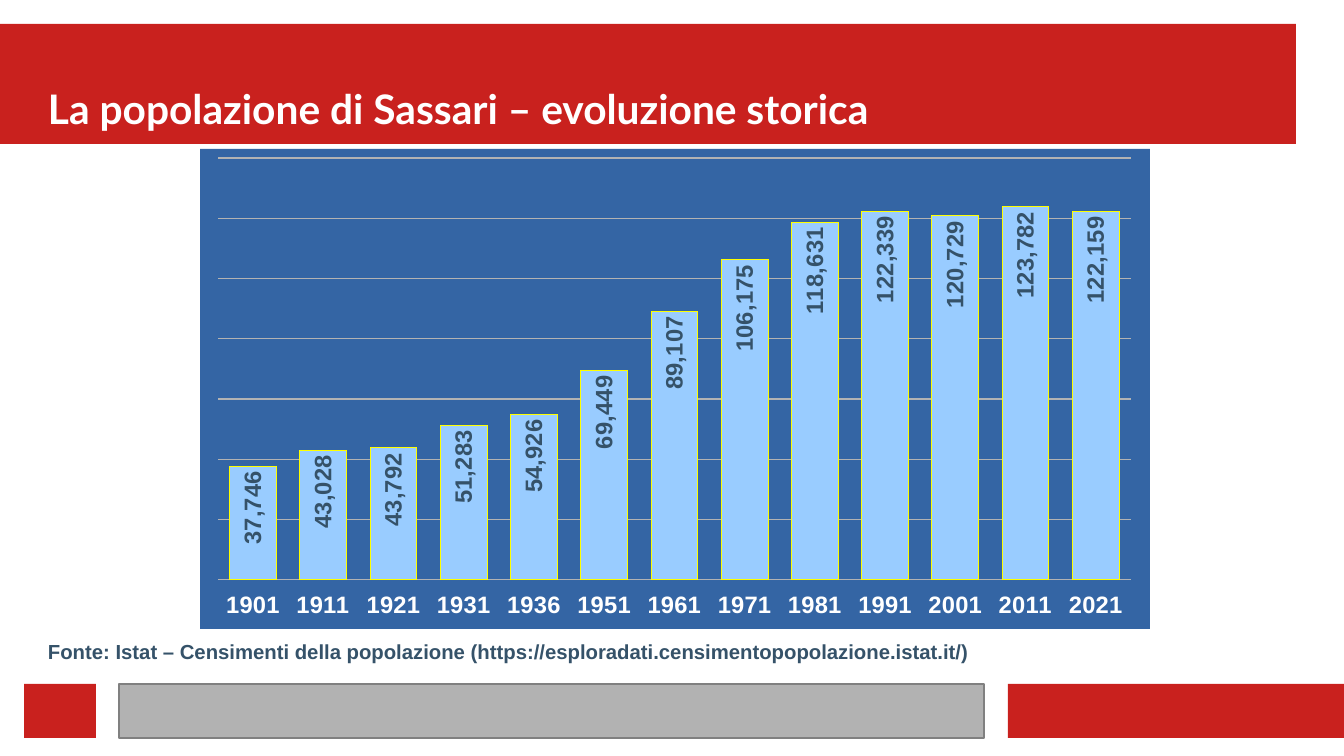
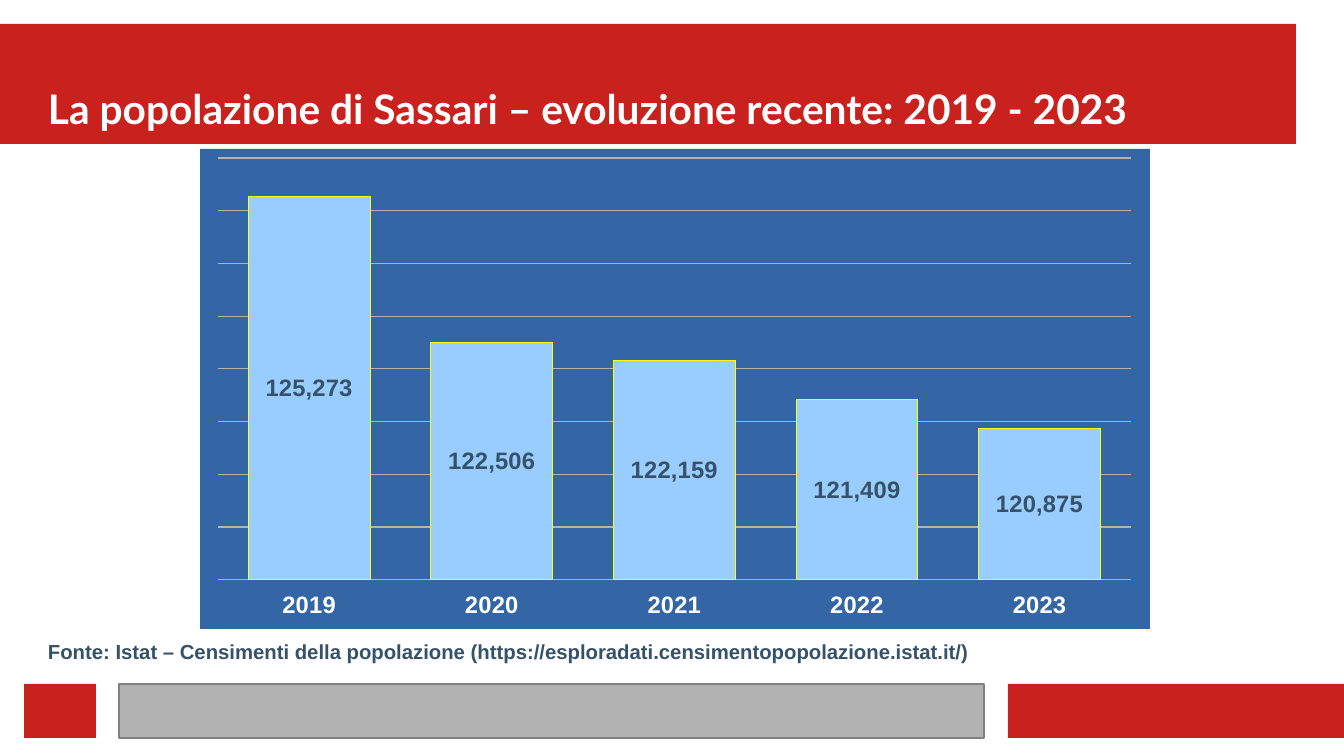
"""Build two slides on the population of Sassari."""
from lxml import etree
from pptx import Presentation
from pptx import util as u
from pptx.chart import data
from pptx.dml import color
from pptx.enum import chart as ch, shapes, text
from pptx.oxml import ns

PX = 914400 / 122
HUES = {"red": "C9211E", "gray": "B2B2B2", "edge": "808080", "ink": "355269",
        "white": "FFFFFF", "back": "3465A4", "bar": "99CCFF",
        "rim": "FFFF00", "grid": "B3B3B3", "black": "000000"}
BANDS = [((0, 24, 1296, 120), "red", None),
         ((1008, 684, 336, 54), "red", None),
         ((119, 684, 865, 54), "gray", "edge"),
         ((24, 684, 72, 54), "red", None)]
HEAD = {"size": u.Pt(24), "name": "Lato", "bold": True}
NOTE = {"size": u.Pt(12), "name": "Arial", "bold": True}
MARK = {"size": u.Pt(14), "name": "Arial", "bold": True}
BASE = {"size": u.Pt(10), "name": "Arial"}
FRAME = {"margin_left": 0, "margin_top": 0, "margin_right": 0,
         "margin_bottom": 0, "word_wrap": True}
PLOT = (200, 149, 950, 480)
INNER = (18, 9, 913, 422)
SOURCE = ("Fonte: Istat – Censimenti della popolazione "
          "(https://esploradati.censimentopopolazione.istat.it/)")
PAST = {"1901": 37746, "1911": 43028, "1921": 43792, "1931": 51283,
        "1936": 54926, "1951": 69449, "1961": 89107, "1971": 106175,
        "1981": 118631, "1991": 122339, "2001": 120729, "2011": 123782,
        "2021": 122159}
LATE = {"2019": 125273, "2020": 122506, "2021": 122159, "2022": 121409,
        "2023": 120875}


def emu(box):
    """Turn px lengths into EMU."""
    return [u.Emu(round(n * PX)) for n in box]


def hue(name):
    """Return a named colour."""
    return color.RGBColor.from_string(HUES[name])


def put(item, vals):
    """Set each attribute in vals on item."""
    for key, val in vals.items():
        setattr(item, key, val)


def style(font, vals, tint):
    """Format a font and give it a colour."""
    put(font, vals)
    font.color.rgb = hue(tint)


def paint(form, fill, edge):
    """Give a format or shape its fill and hairline."""
    form.fill.solid()
    form.fill.fore_color.rgb = hue(fill)
    if edge:
        rule(form.line, edge)
    else:
        form.line.fill.background()


def rule(line, tint):
    """Make a line a coloured hairline."""
    line.color.rgb = hue(tint)
    line.width = 0


def dress(slide):
    """Draw the shared bands and move them to the layout."""
    tree = slide.slide_layout.shapes.element
    for box, fill, edge in BANDS:
        band = slide.shapes.add_shape(shapes.MSO_SHAPE.RECTANGLE, *emu(box))
        band.shadow.inherit = False
        paint(band, fill, edge)
        tree.append(band.element)


def write(slide, box, words, vals, tint, anchor, after=0):
    """Add a text box without margins."""
    frame = slide.shapes.add_textbox(*emu(box)).text_frame
    put(frame, {**FRAME, "vertical_anchor": anchor})
    para = frame.paragraphs[0]
    para.space_after = u.Pt(after)
    run = para.add_run()
    run.text = words
    style(run.font, vals, tint)


def node(root, tag, **attrs):
    """Append an XML child with attributes."""
    return etree.SubElement(root, ns.qn(tag), attrs)


def back(chart):
    """Fill the chart area and fix the inner plot box."""
    core = chart.element.find(ns.qn("c:chart"))
    area = etree.Element(ns.qn("c:spPr"))
    node(node(area, "a:solidFill"), "a:srgbClr", val=HUES["back"])
    node(node(area, "a:ln"), "a:noFill")
    core.addnext(area)
    plot = core.find(ns.qn("c:plotArea"))
    for old in plot.findall(ns.qn("c:layout")):
        plot.remove(old)
    lay = etree.Element(ns.qn("c:layout"))
    plot.insert(0, lay)
    man = node(lay, "c:manualLayout")
    node(man, "c:layoutTarget", val="inner")
    for key in "xy":
        node(man, f"c:{key}Mode", val="edge")
    for key, part, full in zip("xywh", INNER, PLOT[2:] * 2):
        node(man, f"c:{key}", val=f"{part / full:.4f}")


def axes(chart, span):
    """Format both axes and the grid."""
    low, top, step = span
    cat, val = chart.category_axis, chart.value_axis
    for axis in (cat, val):
        axis.format.line.fill.background()
    style(cat.tick_labels.font, MARK, "white")
    put(val, {"minimum_scale": low, "maximum_scale": top, "major_unit": step,
              "has_major_gridlines": True,
              "tick_label_position": ch.XL_TICK_LABEL_POSITION.NONE})
    rule(val.major_gridlines.format.line, "grid")


def label(plot, spot, turn):
    """Show values on the bars at a given place and angle."""
    plot.has_data_labels = True
    tags = plot.data_labels
    put(tags, {"show_value": True, "position": spot,
               "number_format": "#,##0", "number_format_is_linked": False})
    style(tags.font, MARK, "ink")
    body = tags.font and next(plot.data_labels._element.iter(ns.qn("a:bodyPr")))
    put_xml = {"rot": str(turn * 60000), "vert": "horz"}
    for key, val in put_xml.items():
        body.set(key, val)


def bars(slide, vals, span, spot, turn):
    """Add the column chart."""
    facts = data.CategoryChartData()
    facts.categories = list(vals)
    facts.add_series("Series 1", list(vals.values()))
    chart = slide.shapes.add_chart(
        ch.XL_CHART_TYPE.COLUMN_CLUSTERED, *emu(PLOT), facts).chart
    put(chart, {"has_title": False, "has_legend": False})
    style(chart.font, BASE, "black")
    back(chart)
    axes(chart, span)
    plot = chart.plots[0]
    put(plot, {"gap_width": 50, "overlap": 20, "vary_by_categories": False})
    paint(plot.series[0].format, "bar", "rim")
    label(plot, spot, turn)


def page(deck, title, *facts):
    """Add a slide with title, chart and source."""
    slide = deck.slides.add_slide(deck.slide_layouts[6])
    write(slide, (48, 37, 1249, 96), title, HEAD, "white",
          text.MSO_ANCHOR.BOTTOM)
    bars(slide, *facts)
    write(slide, (48, 639, 1225, 38), SOURCE, NOTE, "ink",
          text.MSO_ANCHOR.TOP, 8.5)
    return slide


def main():
    """Build and save the deck."""
    deck = Presentation()
    wide, high = emu((1344, 756))
    put(deck, {"slide_width": wide, "slide_height": high})
    spot = ch.XL_LABEL_POSITION
    first = page(deck, "La popolazione di Sassari – evoluzione storica",
                 PAST, (0, 140000, 20000), spot.INSIDE_END, -90)
    dress(first)
    page(deck, "La popolazione di Sassari – evoluzione recente: 2019 - 2023",
         LATE, (118000, 126000, 1000), spot.CENTER, 0)
    deck.save("out.pptx")


if __name__ == "__main__":
    main()
